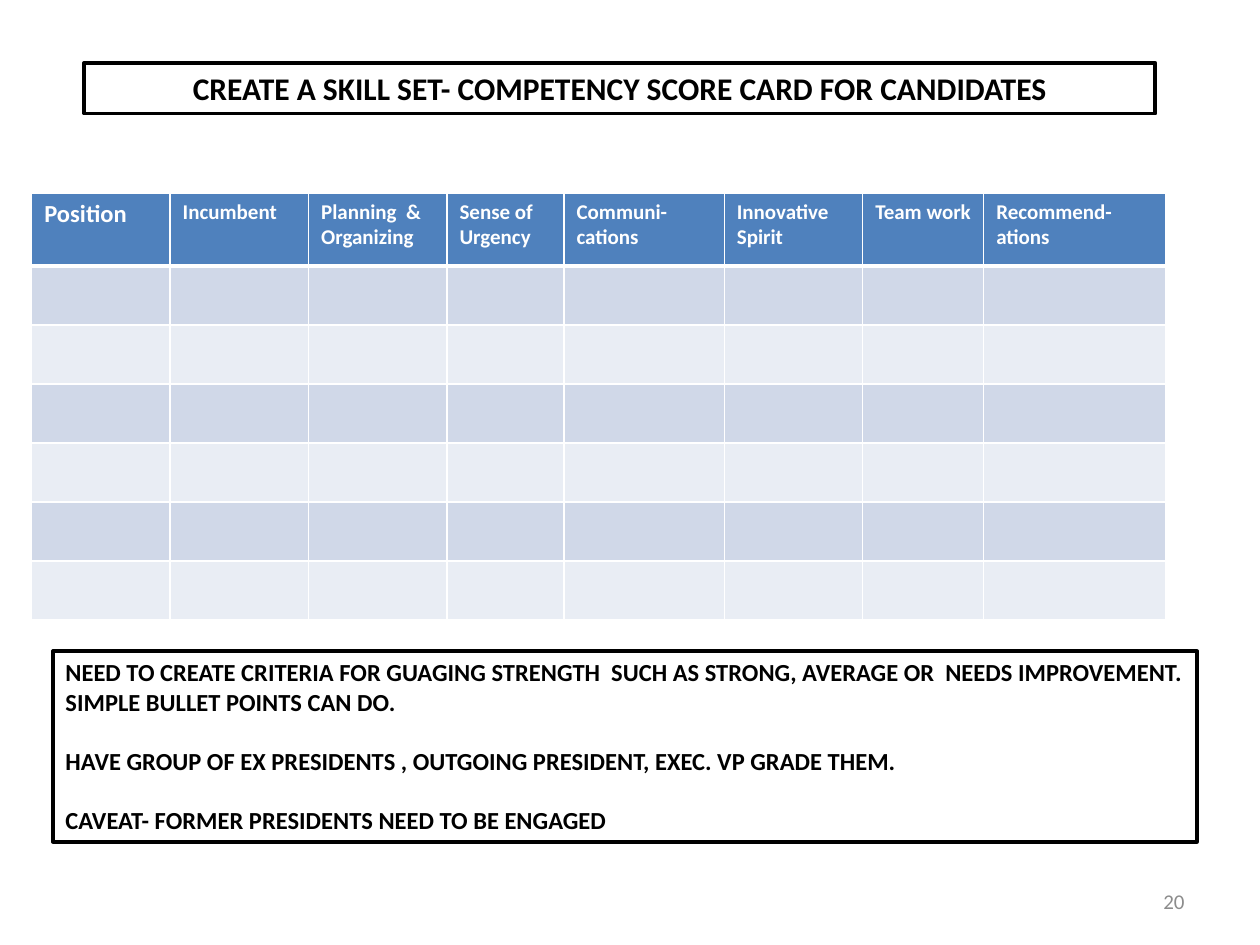
from lxml import etree
from pptx import Presentation
from pptx.dml.color import RGBColor
from pptx.enum.shapes import MSO_SHAPE
from pptx.enum.text import MSO_ANCHOR, PP_ALIGN
from pptx.oxml.ns import qn
from pptx.util import Cm, Pt

RECT = MSO_SHAPE.RECTANGLE
LEFT, CENTER, RIGHT = PP_ALIGN.LEFT, PP_ALIGN.CENTER, PP_ALIGN.RIGHT
TOP, MIDDLE = MSO_ANCHOR.TOP, MSO_ANCHOR.MIDDLE

COLORS = {
    "black": "000000",
    "white": "FFFFFF",
    "header": "4F81BD",
    "band_dark": "D0D8E8",
    "band_light": "E9EDF4",
    "number": "8C8C8C",
}

TITLE = "CREATE A SKILL SET- COMPETENCY SCORE CARD FOR CANDIDATES"

# Column heading, width in cm, text size
COLUMNS = [
    ("Position", 2.79, 14),
    ("Incumbent", 2.79, 12),
    ("Planning  & Organizing", 2.79, 12),
    ("Sense of Urgency", 2.36, 12),
    ("Communi-cations", 3.23, 12),
    ("Innovative Spirit", 2.79, 12),
    ("Team work", 2.44, 12),
    ("Recommend-ations", 3.66, 12),
]
HEADER_HEIGHT, ROW_HEIGHT, CANDIDATE_ROWS = 1.47, 1.19, 6

# Note text, space before in points
NOTES = [
    ("NEED TO CREATE CRITERIA FOR GUAGING STRENGTH  SUCH AS STRONG, "
     "AVERAGE OR  NEEDS IMPROVEMENT.", 0),
    ("SIMPLE BULLET POINTS CAN DO.", 0),
    ("HAVE GROUP OF EX PRESIDENTS , OUTGOING PRESIDENT, EXEC. VP GRADE THEM.", 17),
    ("CAVEAT- FORMER PRESIDENTS NEED TO BE ENGAGED", 17),
]


class ScoreCardSlide:
    font = "Calibri"

    def __init__(self, prs):
        self.s = prs.slides.add_slide(prs.slide_layouts[6])

    def color(self, name):
        return RGBColor.from_string(COLORS[name])

    def set_text(self, p, text, size, color, bold=True, align=LEFT):
        p.text = text
        p.alignment = align
        for r in p.runs:
            r.font.name = self.font
            r.font.size = Pt(size)
            r.font.bold = bold
            r.font.color.rgb = self.color(color)

    def framed_box(self, x, y, w, h, lines, size, align=LEFT):
        sp = self.s.shapes.add_shape(RECT, Cm(x), Cm(y), Cm(w), Cm(h))
        sp.shadow.inherit = False
        sp.fill.background()
        sp.line.color.rgb = self.color("black")
        sp.line.width = Pt(2.25)
        tf = sp.text_frame
        tf.word_wrap = True
        tf.vertical_anchor = TOP
        for i, (text, gap) in enumerate(lines):
            p = tf.add_paragraph() if i else tf.paragraphs[0]
            self.set_text(p, text, size, "black", align=align)
            p.space_before = Pt(gap)

    def label(self, x, y, w, h, text, size, color, align):
        tf = self.s.shapes.add_textbox(Cm(x), Cm(y), Cm(w), Cm(h)).text_frame
        tf.word_wrap = True
        tf.vertical_anchor = MIDDLE
        self.set_text(tf.paragraphs[0], text, size, color, bold=False, align=align)

    def style_cell(self, cell, fill, top, bottom):
        tc_pr = cell._tc.get_or_add_tcPr()
        for side, width in (("L", 1), ("R", 1), ("T", top), ("B", bottom)):
            ln = etree.SubElement(tc_pr, qn(f"a:ln{side}"), w=str(Pt(width)))
            solid = etree.SubElement(ln, qn("a:solidFill"))
            etree.SubElement(solid, qn("a:srgbClr"), val=COLORS["white"])
        cell.fill.solid()
        cell.fill.fore_color.rgb = self.color(fill)

    def score_table(self, x, y):
        width = sum(w for _, w, _ in COLUMNS)
        height = HEADER_HEIGHT + CANDIDATE_ROWS * ROW_HEIGHT
        table = self.s.shapes.add_table(
            CANDIDATE_ROWS + 1, len(COLUMNS), Cm(x), Cm(y), Cm(width), Cm(height)
        ).table
        for i, row in enumerate(table.rows):
            row.height = Cm(ROW_HEIGHT if i else HEADER_HEIGHT)
            band = "band_dark" if i % 2 else "band_light"
            for cell in row.cells:
                self.style_cell(cell, band if i else "header",
                                top=3 if i == 1 else 1, bottom=1 if i else 3)
        for j, (heading, w, size) in enumerate(COLUMNS):
            table.columns[j].width = Cm(w)
            p = table.cell(0, j).text_frame.paragraphs[0]
            self.set_text(p, heading, size, "white")


def main():
    prs = Presentation()
    prs.slide_width, prs.slide_height = Cm(25.4), Cm(19.05)
    slide = ScoreCardSlide(prs)

    # Title
    slide.framed_box(1.7, 1.27, 21.59, 1.02, [(TITLE, 0)], 18, CENTER)
    # Score card
    slide.score_table(0.64, 3.89)
    # Grading notes
    slide.framed_box(1.07, 13.13, 23.06, 3.84, NOTES, 14)
    # Slide number
    slide.label(18.21, 17.65, 5.92, 1.02, "20", 12, "number", RIGHT)

    prs.save("out.pptx")


if __name__ == "__main__":
    main()
